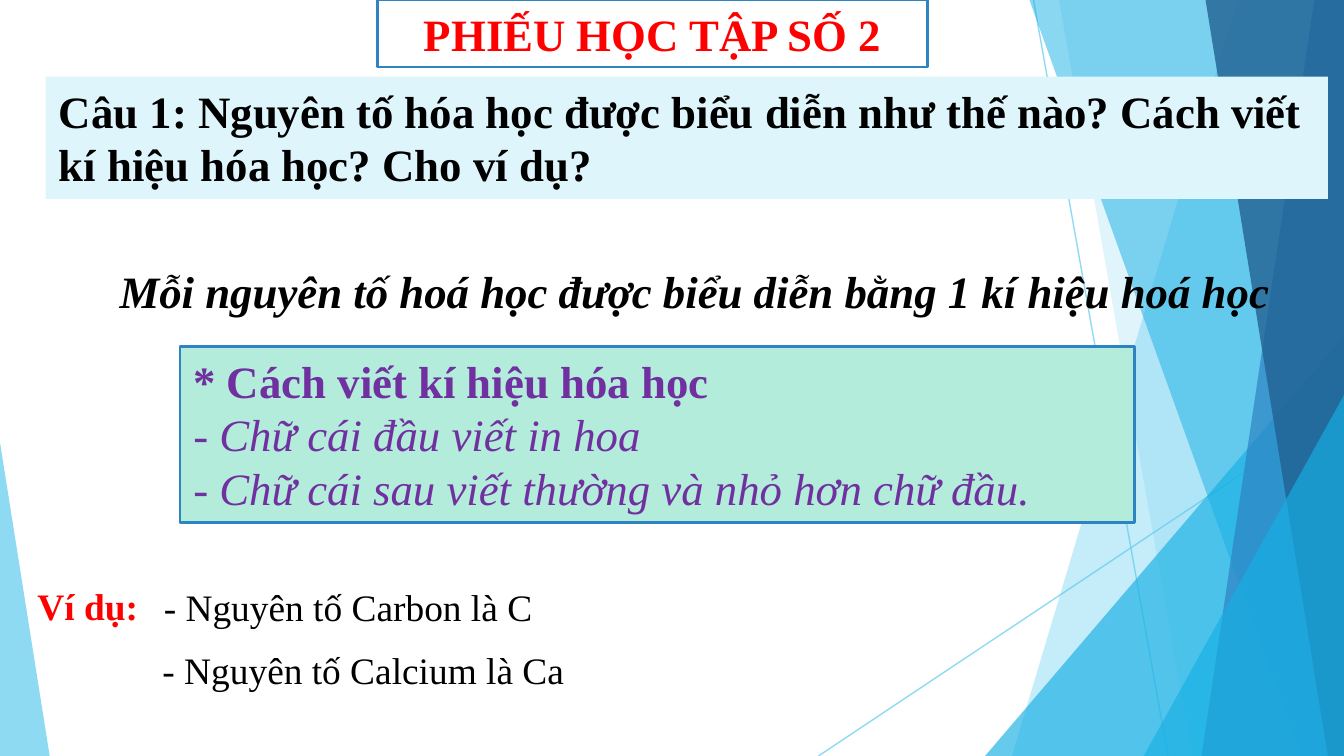
from dataclasses import dataclass

from lxml.etree import SubElement
from pptx import Presentation
from pptx.dml.color import RGBColor
from pptx.enum.shapes import MSO_CONNECTOR, MSO_SHAPE
from pptx.enum.text import MSO_ANCHOR, PP_ALIGN
from pptx.oxml.ns import qn
from pptx.util import Emu, Inches, Pt

COLS, ROWS = 100, 56.25  # square grid cells, a tenth of an inch each
CELL = Inches(0.1)
FONT = "Times New Roman"
HEX = {
    "white": "FFFFFF", "black": "000000", "red": "FF0000", "purple": "7030A0",
    "sky": "5FCBEF", "cyan": "17B0E4", "blue": "2E83C3", "navy": "226292",
    "ice": "DFF5FC", "mint": "B3ECDA",
}


@dataclass
class Ray:
    start: tuple[float, float]
    end: tuple[float, float]


@dataclass
class Band:
    """A full-height area from a slanted left edge to the slide's right edge."""
    top: float
    foot: float
    color: str
    alpha: int


@dataclass
class Wedge:
    """A right triangle standing on the slide's bottom edge."""
    left: float
    top: float
    width: float
    peak: int
    color: str
    alpha: int


@dataclass
class Line:
    text: str
    size: int = 24
    color: str = "black"
    bold: bool = False
    italic: bool = False
    align: PP_ALIGN = PP_ALIGN.LEFT


@dataclass
class Box:
    left: float
    top: float
    width: float
    height: float
    lines: list[Line]
    fill: str | None = None
    edge: str | None = None
    kind: MSO_SHAPE = MSO_SHAPE.RECTANGLE
    indent: float = 0


RAYS = [Ray((76.9, 0), (86.9, ROWS)), Ray((COLS, 30.2), (60.9, ROWS))]
DECOR = [
    Band(92.1, 75.3, "sky", 36),
    Band(78.8, 88.7, "sky", 20),
    Wedge(73.3, 25, 26.7, 1, "cyan", 66),
    Band(76.6, 96.8, "cyan", 50),
    Band(97.8, 89.4, "blue", 70),
    Band(89.7, 98.8, "navy", 80),
    Wedge(85.1, 29.4, 14.9, 1, "cyan", 66),
    Wedge(0, 32.9, 3.7, 0, "sky", 70),
]
BOXES = [
    Box(28.1, 0, 40.9, 5, [
        Line("PHIẾU HỌC TẬP SỐ 2", color="red", bold=True, align=PP_ALIGN.CENTER),
    ], "white", "blue"),
    Box(3.4, 5.7, 95.4, 9.1, [
        Line("Câu 1: Nguyên tố hóa học được biểu diễn như thế nào? "
             "Cách viết kí hiệu hóa học? Cho ví dụ?", bold=True),
    ], "ice"),
    Box(5.1, 19.1, 92.3, 5.3, [
        Line("Mỗi nguyên tố hoá học được biểu diễn bằng 1 kí hiệu hoá học",
             bold=True, italic=True),
    ], indent=2.8),
    Box(13.4, 25.8, 71, 13.1, [
        Line("* Cách viết kí hiệu hóa học", color="purple", bold=True),
        Line("- Chữ cái đầu viết in hoa", color="purple", italic=True),
        Line("- Chữ cái sau viết thường và nhỏ hơn chữ đầu.",
             color="purple", italic=True),
    ], "mint", "blue"),
    Box(1.8, 42, 13.3, 6.1, [Line("Ví dụ:", 20, "red", True)], kind=MSO_SHAPE.WAVE),
    Box(11.2, 43, 36.8, 4.4, [Line("- Nguyên tố Carbon là C", 20)]),
    Box(11.1, 47.7, 39.1, 4.4, [Line("- Nguyên tố Calcium là Ca", 20)]),
]


def cells(*counts: float) -> list[Emu]:
    return [Emu(round(count * CELL)) for count in counts]


def rgb(name: str) -> RGBColor:
    return RGBColor.from_string(HEX[name])


def fade(part, alpha: int) -> None:
    """Set the opacity, in percent, of the solid colour held in an XML part."""
    color = next(part.iter(qn("a:srgbClr")))
    SubElement(color, qn("a:alpha"), val=str(alpha * 1000))


def tint(shape, color: str, alpha: int) -> None:
    shape.shadow.inherit = False
    shape.line.fill.background()
    shape.fill.solid()
    shape.fill.fore_color.rgb = rgb(color)
    fade(shape._element.spPr, alpha)


def draw_ray(slide, ray: Ray) -> None:
    link = slide.shapes.add_connector(
        MSO_CONNECTOR.STRAIGHT, *cells(*ray.start, *ray.end))
    link.line.color.rgb = rgb("sky")
    link.line.width = Pt(0.75)
    fade(link._element.spPr, 70)
    SubElement(link._element.spPr, qn("a:effectLst"))


def draw_band(slide, band: Band) -> None:
    pen = slide.shapes.build_freeform(*cells(band.top, 0))
    corners = [(COLS, 0), (COLS, ROWS), (band.foot, ROWS)]
    pen.add_line_segments([cells(*spot) for spot in corners], close=True)
    tint(pen.convert_to_shape(), band.color, band.alpha)


def draw_wedge(slide, wedge: Wedge) -> None:
    shape = slide.shapes.add_shape(
        MSO_SHAPE.ISOSCELES_TRIANGLE,
        *cells(wedge.left, wedge.top, wedge.width, ROWS - wedge.top))
    shape.adjustments[0] = wedge.peak
    tint(shape, wedge.color, wedge.alpha)


def draw_box(slide, box: Box) -> None:
    shape = slide.shapes.add_shape(
        box.kind, *cells(box.left, box.top, box.width, box.height))
    shape.shadow.inherit = False
    if box.fill:
        shape.fill.solid()
        shape.fill.fore_color.rgb = rgb(box.fill)
    else:
        shape.fill.background()
    if box.edge:
        shape.line.color.rgb = rgb(box.edge)
        shape.line.width = Pt(1.5)
    else:
        shape.line.fill.background()
    frame = shape.text_frame
    wavy = box.kind == MSO_SHAPE.WAVE
    if wavy:
        shape.adjustments[0] = 0.08
    frame.word_wrap = not wavy
    frame.vertical_anchor = MSO_ANCHOR.MIDDLE if wavy else MSO_ANCHOR.TOP
    frame.margin_left += cells(box.indent)[0]
    for index, line in enumerate(box.lines):
        para = frame.add_paragraph() if index else frame.paragraphs[0]
        para.text, para.alignment = line.text, line.align
        font = para.font
        font.name, font.size = FONT, Pt(line.size)
        font.bold, font.italic = line.bold, line.italic
        font.color.rgb = rgb(line.color)


def main() -> None:
    deck = Presentation()
    deck.slide_width, deck.slide_height = cells(COLS, ROWS)
    slide = deck.slides.add_slide(deck.slide_layouts[6])
    for ray in RAYS:
        draw_ray(slide, ray)
    for item in DECOR:
        if isinstance(item, Band):
            draw_band(slide, item)
        else:
            draw_wedge(slide, item)
    for box in BOXES:
        draw_box(slide, box)
    deck.save("out.pptx")


if __name__ == "__main__":
    main()
